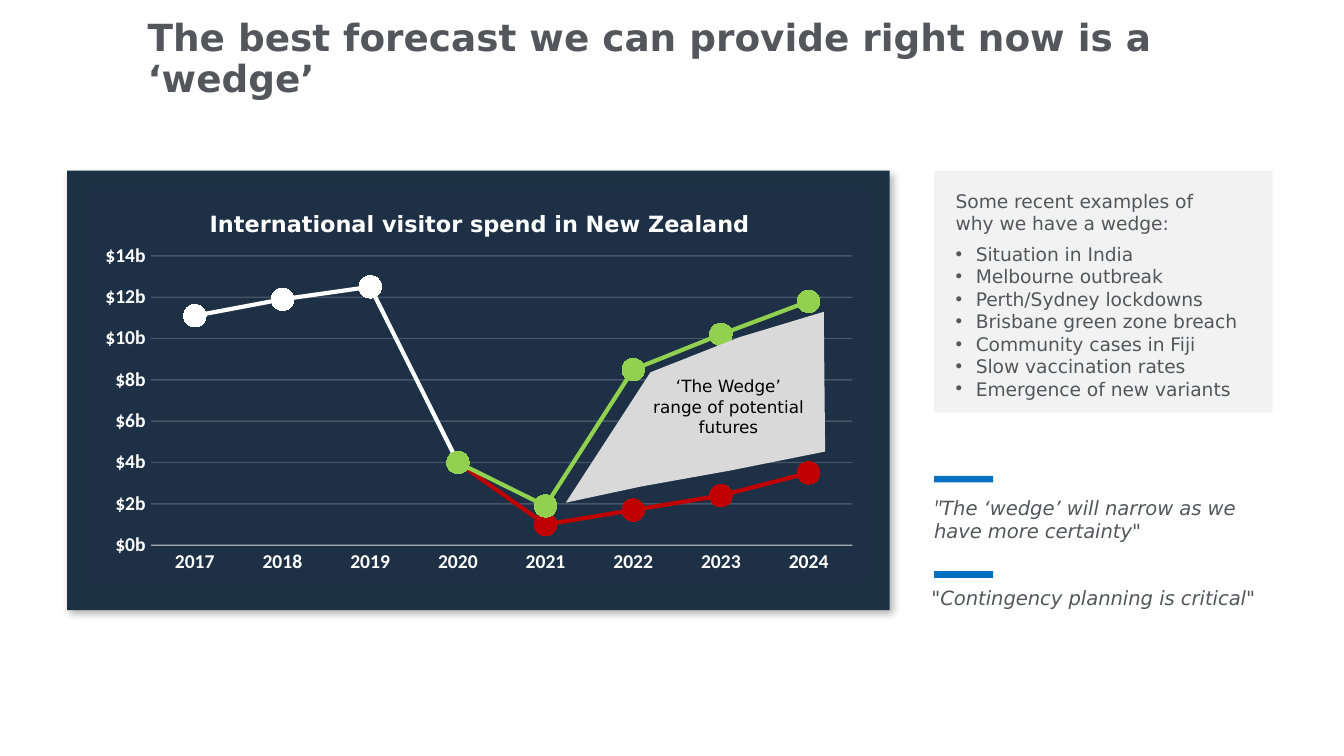
from lxml import etree
from pptx import Presentation
from pptx.chart import data
from pptx.dml.color import RGBColor
from pptx.enum import chart as ch, shapes, text
from pptx.oxml import parse_xml
from pptx.oxml.ns import nsdecls, qn
from pptx.util import Inches, Pt

WHITE = RGBColor(0xFF, 0xFF, 0xFF)
BLACK = RGBColor(0x00, 0x00, 0x00)
NAVY = RGBColor(0x1D, 0x31, 0x45)
CHART_NAVY = RGBColor(0x1D, 0x30, 0x45)
SLATE = RGBColor(0x53, 0x56, 0x5A)
PALE = RGBColor(0xF2, 0xF2, 0xF2)
GRID = RGBColor(0xF0, 0xF0, 0xF0)
WEDGE = RGBColor(0xD9, 0xD9, 0xD9)
RED = RGBColor(0xC0, 0x00, 0x00)
GREEN = RGBColor(0x92, 0xD0, 0x50)
BLUE = RGBColor(0x00, 0x70, 0xC0)
FONT = "DejaVu Sans"
NBSP = chr(160)  # keeps neighbouring words on one line

deck = Presentation()
deck.slide_width = Inches(10)
deck.slide_height = Inches(10) * 9 // 16
page = deck.slides.add_slide(deck.slide_layouts[6])


def paint(shape, color):
    """Give a shape a plain fill with no outline or shadow."""
    shape.shadow.inherit = False
    shape.fill.solid()
    shape.fill.fore_color.rgb = color
    shape.line.fill.background()


def add_text(place, lines, size, color=SLATE, inset=(0.07, 0.04)):
    """Add a wrapping text box; every line after the first is a bullet."""
    box = page.shapes.add_textbox(*map(Inches, place))
    frame = box.text_frame
    frame.word_wrap = True
    frame.margin_left = frame.margin_right = Inches(inset[0])
    frame.margin_top = frame.margin_bottom = Inches(inset[1])
    for number, line in enumerate(lines):
        para = frame.paragraphs[0] if number == 0 else frame.add_paragraph()
        para.text = line
        if number:
            props = para._p.get_or_add_pPr()
            props.set("marL", str(Inches(0.15)))
            props.set("indent", str(Inches(-0.15)))
            etree.SubElement(props, qn("a:buFont"), typeface="Arial")
            etree.SubElement(props, qn("a:buChar"), char="•")
        para.font.name, para.font.size = FONT, Pt(size)
        para.font.color.rgb = color
    return frame


# Dark panel with a soft shadow
panel = page.shapes.add_shape(shapes.MSO_SHAPE.RECTANGLE, Inches(0.5), Inches(1.27),
                              Inches(6.12), Inches(3.27))
paint(panel, NAVY)
panel._element.spPr.find(qn("a:effectLst")).append(parse_xml(
    f'<a:outerShdw {nsdecls("a")} blurRad="{Pt(4.5)}" dist="{Pt(2.6)}" dir="{53 * 60000}"'
    ' algn="tl" rotWithShape="0"><a:srgbClr val="000000"><a:alpha val="30000"/>'
    '</a:srgbClr></a:outerShdw>'))

# Title
title = add_text((1, 0.25, 9, 0.39), ["The best forecast we can provide right now is a ‘wedge’"],
                 20, inset=(0.1, 0.05))
title.vertical_anchor = text.MSO_ANCHOR.MIDDLE
title.paragraphs[0].line_spacing = 0.9
title.paragraphs[0].font.bold = True

# Visitor spend chart
spend = data.CategoryChartData()
spend.categories = [str(year) for year in range(2017, 2025)]
SERIES = [
    ("Series 1", WHITE, [11.1, 11.9, 12.5, 4, None, None, None, None]),
    ("Series 2", RED, [None, None, None, 4, 1, 1.7, 2.4, 3.5]),
    ("Series 3", GREEN, [None, None, None, 4, 1.9, 8.5, 10.2, 11.8]),
]
for name, color, billions in SERIES:
    spend.add_series(name, [None if b is None else round(b * 1e9) for b in billions])
chart = page.shapes.add_chart(ch.XL_CHART_TYPE.LINE_MARKERS, Inches(0.66), Inches(1.41),
                              Inches(5.8), Inches(2.91), spend).chart
chart.has_legend = False
chart.font.name, chart.font.size, chart.font.bold = "Calibri", Pt(10), True
chart.font.color.rgb = WHITE
chart.has_title = True
heading = chart.chart_title.text_frame.paragraphs[0]
heading.text = "International visitor spend in New Zealand"
heading.font.name, heading.font.size, heading.font.bold = FONT, Pt(12), True
heading.font.color.rgb = WHITE

plot = chart.plots[0]
plot.vary_by_categories = False
for series, (name, color, billions) in zip(plot.series, SERIES):
    series.smooth = False
    series.format.line.width = Pt(2.25)
    series.format.line.color.rgb = color
    series.marker.style, series.marker.size = ch.XL_MARKER_STYLE.CIRCLE, 12
    series.marker.format.fill.solid()
    series.marker.format.fill.fore_color.rgb = color
    series.marker.format.line.color.rgb = color

years, dollars = chart.category_axis, chart.value_axis
dollars.minimum_scale, dollars.maximum_scale, dollars.major_unit = 0, 14e9, 2e9
dollars.tick_labels.number_format = r'"$"#,,,"b";"$"\-0"b";"$"0"b";'
dollars.tick_labels.number_format_is_linked = False
dollars.format.line.fill.background()
dollars.has_major_gridlines = True
for axis, line, color, opacity in [(years, years.format.line, WHITE, 50),
                                   (dollars, dollars.major_gridlines.format.line, GRID, 20)]:
    axis.major_tick_mark = axis.minor_tick_mark = ch.XL_TICK_MARK.NONE
    line.width = Pt(0.75)
    line.color.rgb = color
    line_color = next(axis._element.iter(qn("a:srgbClr")))
    etree.SubElement(line_color, qn("a:alpha"), val=str(opacity * 1000))
    font = axis.tick_labels.font
    font.name, font.size, font.bold = "Calibri", Pt(10.5), True
    font.color.rgb = WHITE

# Chart background and fixed positions of title and plot area
chart_root = chart._chartSpace.find(qn("c:chart"))
chart_root.addnext(parse_xml(
    f'<c:spPr {nsdecls("c", "a")}><a:solidFill><a:srgbClr val="{CHART_NAVY}"/></a:solidFill>'
    '<a:ln><a:noFill/></a:ln></c:spPr>'))
for tag, index, settings in [
    ("c:title", 1, {"xMode": "edge", "yMode": "edge", "x": 0.15, "y": 0.04}),
    ("c:plotArea", 0, {"layoutTarget": "inner", "xMode": "edge", "yMode": "edge",
                       "x": 0.08, "y": 0.17, "w": 0.9, "h": 0.74}),
]:
    parent = chart_root.find(qn(tag))
    for old in parent.findall(qn("c:layout")):
        parent.remove(old)
    layout = etree.Element(qn("c:layout"))
    manual = etree.SubElement(layout, qn("c:manualLayout"))
    for key, value in settings.items():
        etree.SubElement(manual, qn(f"c:{key}"), val=str(value))
    parent.insert(index, layout)

# Quotes
quote = add_text((6.88, 3.65, 2.53, 0.73), ['"'], 10.5).paragraphs[0]
quote.runs[0].font.name = "Cabin"
quote.add_run().text = f'The ‘wedge’ will narrow as{NBSP}we have more certainty"'
quote.font.italic = True
planning = add_text((6.86, 4.32, 2.78, 0.25), [f'"Contingency planning is{NBSP}critical"'], 10.5)
planning.paragraphs[0].font.italic = True

# Examples panel and the accent bars above the quotes
for top, width, height, color in [(1.27, 2.52, 1.8, PALE), (3.54, 0.44, 0.05, BLUE),
                                  (4.25, 0.44, 0.05, BLUE)]:
    block = page.shapes.add_shape(shapes.MSO_SHAPE.RECTANGLE, Inches(6.95), Inches(top),
                                  Inches(width), Inches(height))
    paint(block, color)
examples = add_text((7.04, 1.37, 2.32, 1.66), [
    f"Some recent{NBSP}examples{NBSP}of why{NBSP}we have a wedge:",
    "Situation in India",
    "Melbourne outbreak",
    "Perth/Sydney lockdowns",
    "Brisbane green zone breach",
    "Community cases in Fiji",
    "Slow vaccination rates",
    "Emergence of new variants",
], 10)
examples.paragraphs[0].space_after = Pt(4.5)

# The wedge between the two scenarios
outline = [(4.21, 3.74), (4.84, 2.77), (5.5, 2.51), (6.13, 2.32),
           (6.14, 3.36), (5.44, 3.5), (4.77, 3.62)]
points = [(Inches(x), Inches(y)) for x, y in outline]
builder = page.shapes.build_freeform(*points[0])
builder.add_line_segments(points[1:], close=True)
paint(builder.convert_to_shape(), WEDGE)
label = add_text((4.7, 2.75, 1.44, 0.56), ["‘The Wedge’"], 9, BLACK, (0.1, 0.05)).paragraphs[0]
label.add_line_break()
label.add_run().text = "range of potential futures"
label.alignment = text.PP_ALIGN.CENTER

deck.save("out.pptx")
